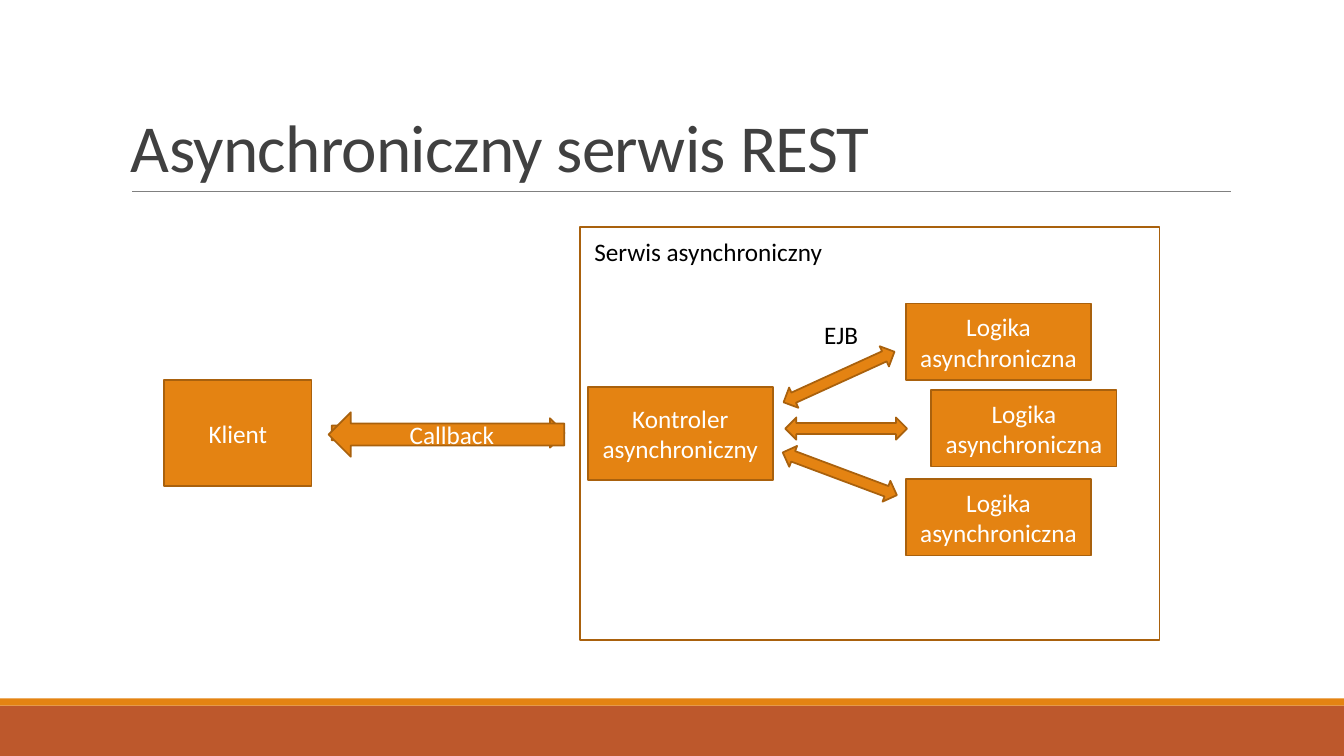
from dataclasses import dataclass

from lxml import etree
from pptx import Presentation
from pptx.dml.color import RGBColor
from pptx.enum.shapes import MSO_CONNECTOR, MSO_SHAPE as Preset
from pptx.enum.text import MSO_ANCHOR as Anchor, PP_ALIGN as Align
from pptx.oxml.ns import qn
from pptx.util import Cm, Pt


@dataclass(frozen=True)
class Theme:
    font: str = "Calibri"
    orange: str = "E48312"
    outline: str = "A9610D"
    rust: str = "BD582C"
    rule: str = "808080"
    title: str = "404040"
    light: str = "FFFFFF"
    dark: str = "000000"
    title_size: float = 48
    body_size: float = 18
    outline_width: float = 1.25
    rule_width: float = 0.5


THEME = Theme()
SLIDE_WIDTH, SLIDE_HEIGHT = 33.87, 19.05


def rgb(value):
    return RGBColor.from_string(value)


def write(shape, text, color, size=THEME.body_size, align=Align.LEFT, anchor=Anchor.TOP):
    frame = shape.text_frame
    frame.word_wrap = True
    frame.vertical_anchor = anchor
    paragraph = frame.paragraphs[0]
    paragraph.text = text
    paragraph.alignment = align
    paragraph.font.name = THEME.font
    paragraph.font.size = Pt(size)
    paragraph.font.color.rgb = rgb(color)
    return paragraph


def add_block(slide, preset, left, top, width, height,
              text=None, fill=THEME.orange, line=THEME.outline, rotation=0):
    shape = slide.shapes.add_shape(preset, Cm(left), Cm(top), Cm(width), Cm(height))
    shape.shadow.inherit = False
    shape.rotation = rotation
    if fill:
        shape.fill.solid()
        shape.fill.fore_color.rgb = rgb(fill)
    else:
        shape.fill.background()
    if line:
        shape.line.color.rgb = rgb(line)
        shape.line.width = Pt(THEME.outline_width)
    else:
        shape.line.fill.background()
    if text:
        write(shape, text, THEME.light, align=Align.CENTER, anchor=Anchor.MIDDLE)


def add_label(slide, text, left, top, width, height, color=THEME.dark, **style):
    box = slide.shapes.add_textbox(Cm(left), Cm(top), Cm(width), Cm(height))
    return write(box, text, color, **style)


def add_rule(slide, left, right, top):
    rule = slide.shapes.add_connector(
        MSO_CONNECTOR.STRAIGHT, Cm(left), Cm(top), Cm(right), Cm(top))
    rule.line.color.rgb = rgb(THEME.rule)
    rule.line.width = Pt(THEME.rule_width)
    etree.SubElement(rule._element.spPr, qn("a:effectLst"))


def add_title(slide, text):
    paragraph = add_label(slide, text, 3.05, 0.79, 27.94, 4.04, THEME.title,
                          size=THEME.title_size, anchor=Anchor.BOTTOM)
    paragraph.line_spacing = 0.85
    # Slightly tightened letter spacing
    paragraph.runs[0]._r.get_or_add_rPr().set("spc", "-50")


def main():
    presentation = Presentation()
    presentation.slide_width = Cm(SLIDE_WIDTH)
    presentation.slide_height = Cm(SLIDE_HEIGHT)
    slide = presentation.slides.add_slide(presentation.slide_layouts[6])

    # Footer bands and heading
    for top, height, color in ((17.78, 1.27, THEME.rust), (17.6, 0.18, THEME.orange)):
        add_block(slide, Preset.RECTANGLE, 0, top, SLIDE_WIDTH, height, fill=color, line=None)
    add_rule(slide, 3.33, 31.01, 4.83)
    add_title(slide, "Asynchroniczny serwis REST")

    # Controller and the logic components it calls
    add_block(slide, Preset.RECTANGLE, 14.81, 9.75, 4.67, 2.34, "Kontroler asynchroniczny")
    for left, top in ((22.83, 7.65), (23.47, 9.83), (22.83, 12.07)):
        add_block(slide, Preset.RECTANGLE, left, top, 4.67, 1.93, "Logika asynchroniczna")
    for left, top, rotation in ((19.79, 10.52, 0), (19.61, 9.22, 335.5), (19.63, 11.66, 20.5)):
        add_block(slide, Preset.LEFT_RIGHT_ARROW, left, top, 3.07, 0.56, rotation=rotation)

    # Request and callback between client and service
    add_block(slide, Preset.RIGHT_ARROW, 8.36, 10.54, 5.87, 0.74)
    add_block(slide, Preset.LEFT_ARROW, 8.28, 10.39, 5.94, 1.12, "Callback")

    # Service frame, client and labels
    add_block(slide, Preset.RECTANGLE, 14.61, 5.72, 14.61, 10.41, fill=None)
    add_block(slide, Preset.RECTANGLE, 4.14, 9.58, 3.71, 2.67, "Klient")
    add_label(slide, "Serwis asynchroniczny", 14.73, 5.84, 6.71, 1.02)
    add_label(slide, "EJB", 20.52, 7.92, 1.6, 1.02)

    presentation.save("out.pptx")


if __name__ == "__main__":
    main()
